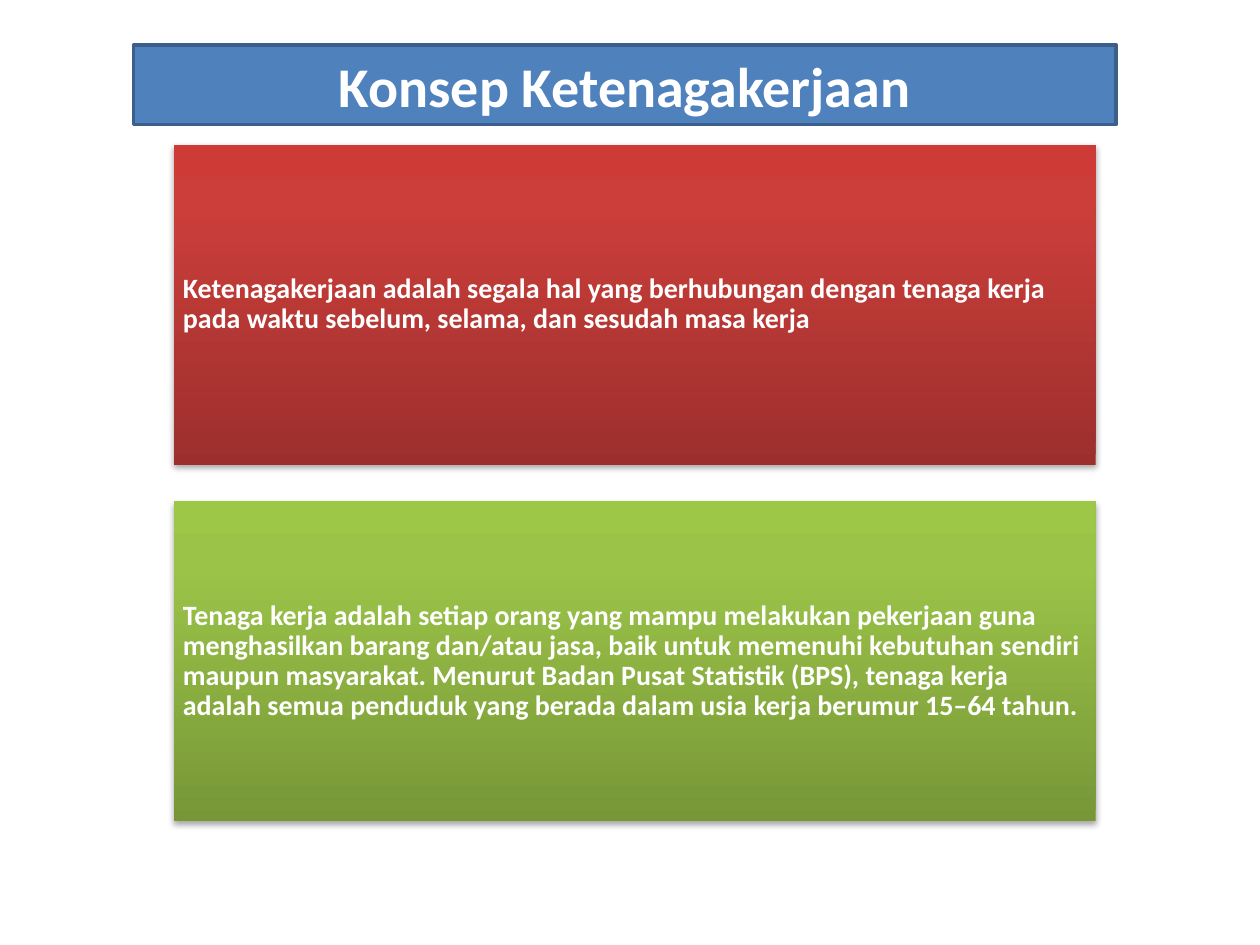
from dataclasses import dataclass

import pptx
import pptx.dml.color
import pptx.enum.shapes
import pptx.enum.text
import pptx.oxml
import pptx.oxml.ns
import pptx.util

Cm = pptx.util.Cm
RGB = pptx.dml.color.RGBColor.from_string
ALIGN = pptx.enum.text.PP_ALIGN
NAMESPACE = pptx.oxml.ns.nsdecls("a")


@dataclass(frozen=True)
class Theme:
    font: str = "Calibri"
    text: str = "FFFFFF"
    banner_fill: str = "4F81BD"
    banner_line: str = "3A5F8C"
    red: tuple[str, ...] = ("9C2F2D", "CB3E3A", "CE3B37")
    green: tuple[str, ...] = ("779737", "9BC348", "9DC746")
    title_size: int = 32
    body_size: int = 16


@dataclass(frozen=True)
class Definition:
    text: str
    gradient: tuple[str, ...]


THEME = Theme()
PANEL_LEFT, PANEL_TOP, PANEL_WIDTH, PANEL_HEIGHT = 3.51, 2.92, 18.58, 6.45
PANEL_PITCH = 7.19
PANEL_INSET = 0.18

DEFINITIONS = (
    Definition(
        "Ketenagakerjaan adalah segala hal yang berhubungan dengan tenaga kerja "
        "pada waktu sebelum, selama, dan sesudah masa kerja",
        THEME.red,
    ),
    Definition(
        "Tenaga kerja adalah setiap orang yang mampu melakukan pekerjaan guna "
        "menghasilkan barang dan/atau jasa, baik untuk memenuhi kebutuhan sendiri "
        "maupun masyarakat. Menurut Badan Pusat Statistik (BPS), tenaga kerja "
        "adalah semua penduduk yang berada dalam usia kerja berumur 15–64 tahun.",
        THEME.green,
    ),
)


def apply_format(target: object, values: dict[str, object]) -> None:
    for name, value in values.items():
        setattr(target, name, value)


def write_text(shape, text: str, size: int, alignment: ALIGN, spacing: float) -> None:
    frame = shape.text_frame
    frame.text = text
    apply_format(frame, {
        "word_wrap": True,
        "auto_size": pptx.enum.text.MSO_AUTO_SIZE.NONE,
        "vertical_anchor": pptx.enum.text.MSO_ANCHOR.MIDDLE,
    })
    paragraph = frame.paragraphs[0]
    apply_format(paragraph, {"alignment": alignment, "line_spacing": spacing})
    apply_format(paragraph.runs[0].font, {
        "name": THEME.font, "size": pptx.util.Pt(size), "bold": True,
    })
    paragraph.runs[0].font.color.rgb = RGB(THEME.text)


def format_banner(title) -> None:
    apply_format(title, {
        "left": Cm(2.69), "top": Cm(0.91), "width": Cm(19.81), "height": Cm(1.6),
    })
    # Rounded outline for the title placeholder
    title._element.spPr.xfrm.addnext(pptx.oxml.parse_xml(
        f'<a:prstGeom {NAMESPACE} prst="roundRect"><a:avLst/></a:prstGeom>'))
    title.fill.solid()
    title.fill.fore_color.rgb = RGB(THEME.banner_fill)
    title.line.color.rgb = RGB(THEME.banner_line)
    title.line.width = pptx.util.Pt(2)
    write_text(title, "Konsep Ketenagakerjaan", THEME.title_size, ALIGN.CENTER, 1.0)


def add_panel(slide, definition: Definition, top: float) -> None:
    panel = slide.shapes.add_shape(
        pptx.enum.shapes.MSO_SHAPE.RECTANGLE,
        Cm(PANEL_LEFT), Cm(top), Cm(PANEL_WIDTH), Cm(PANEL_HEIGHT))
    panel.line.fill.background()

    # Three-stop gradient, dark at the bottom, and a soft shadow below
    stops = "".join(
        f'<a:gs pos="{position * 1000}"><a:srgbClr val="{color}"/></a:gs>'
        for position, color in zip((0, 80, 100), definition.gradient))
    properties = panel._element.spPr
    properties.prstGeom.addnext(pptx.oxml.parse_xml(
        f'<a:gradFill {NAMESPACE} rotWithShape="1"><a:gsLst>{stops}</a:gsLst>'
        '<a:lin ang="16200000" scaled="0"/></a:gradFill>'))
    properties.append(pptx.oxml.parse_xml(
        f'<a:effectLst {NAMESPACE}><a:outerShdw blurRad="40000" dist="23000" '
        'dir="5400000" rotWithShape="0"><a:srgbClr val="000000">'
        '<a:alpha val="35000"/></a:srgbClr></a:outerShdw></a:effectLst>'))

    write_text(panel, definition.text, THEME.body_size, ALIGN.LEFT, 0.9)
    apply_format(panel.text_frame, {
        f"margin_{side}": Cm(PANEL_INSET) for side in ("left", "top", "right", "bottom")
    })


def main() -> None:
    presentation = pptx.Presentation()
    apply_format(presentation, {"slide_width": Cm(25.4), "slide_height": Cm(19.05)})
    slide = presentation.slides.add_slide(
        presentation.slide_layouts.get_by_name("Title Only"))

    # Title banner
    format_banner(slide.shapes.title)

    # Definition panels
    for row, definition in enumerate(DEFINITIONS):
        add_panel(slide, definition, PANEL_TOP + row * PANEL_PITCH)

    presentation.save("out.pptx")


if __name__ == "__main__":
    main()
